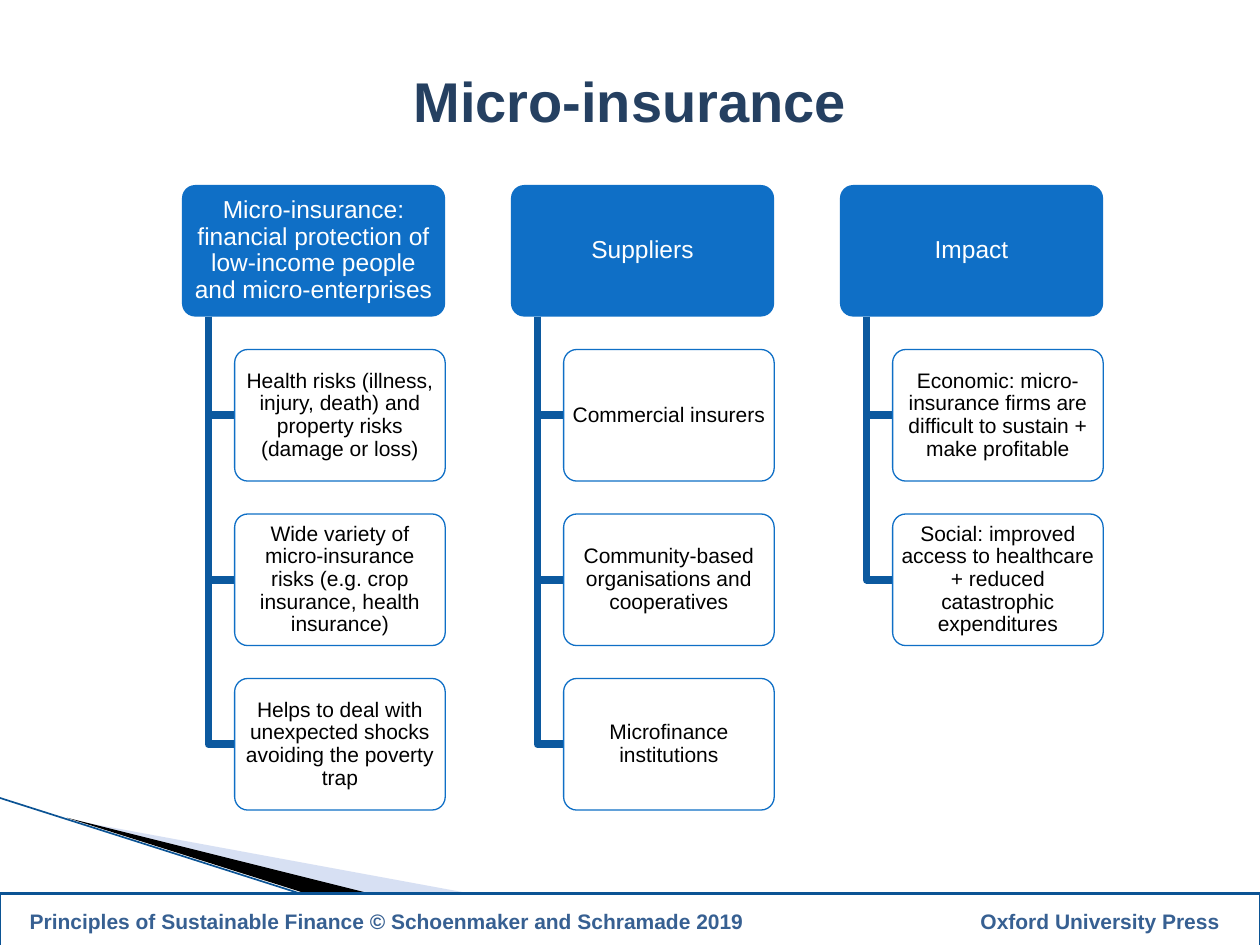
from dataclasses import dataclass

from lxml import etree
from pptx import Presentation
from pptx.dml.color import RGBColor
from pptx.enum import shapes as kinds, text as txt
from pptx.oxml.ns import qn
from pptx.util import Pt

BLUE, ELBOW_BLUE, EDGE_BLUE = "0F6FC6", "0C599F", "0B5394"
WHITE, BLACK = "FFFFFF", "000000"

# Column grid: pitches and indents are fractions of the header box
LEFT, TOP = 104, 105.7
HEADER_W, BOX_H = 150.4, 75.2
COLUMN_PITCH, ROW_PITCH = 1.25 * HEADER_W, 1.25 * BOX_H
TRUNK_INDENT, ITEM_INDENT = 0.1 * HEADER_W, 0.2 * HEADER_W
ITEM_W = HEADER_W - ITEM_INDENT


@dataclass
class Column:
    heading: str
    items: list[str]


@dataclass
class Wedge:
    points: list[tuple[float, float]]
    color: str
    opacity: int


COLUMNS = [
    Column("Micro-insurance: financial protection of low-income people and micro-enterprises", [
        "Health risks (illness, injury, death) and property risks (damage or loss)",
        "Wide variety of micro-insurance risks (e.g. crop insurance, health insurance)",
        "Helps to deal with unexpected shocks avoiding the poverty trap",
    ]),
    Column("Suppliers", [
        "Commercial insurers",
        "Community-based organisations and cooperatives",
        "Microfinance institutions",
    ]),
    Column("Impact", [
        "Economic: micro-insurance firms are difficult to sustain + make profitable",
        "Social: improved access to healthcare + reduced catastrophic expenditures",
    ]),
]

WEDGES = [
    Wedge([(39.6, 468.4), (428.4, 540), (328.3, 540)], "9DB2E1", 40),
    Wedge([(38.2, 467.3), (329, 540), (267.8, 540)], BLACK, 100),
]


def rgb(color: str) -> RGBColor:
    return RGBColor.from_string(color)


def paint(shape, color: str, opacity: int = 100) -> None:
    shape.fill.solid()
    shape.fill.fore_color.rgb = rgb(color)
    if opacity < 100:
        swatch = shape._element.spPr.find(qn("a:solidFill"))[0]
        etree.SubElement(swatch, qn("a:alpha"), val=str(opacity * 1000))


def outline(shape, color: str, width: float) -> None:
    shape.line.color.rgb = rgb(color)
    shape.line.width = Pt(width)


def write(paragraph, words: str, size: float, color: str, bold: bool = False) -> None:
    run = paragraph.add_run()
    run.text = words
    run.font.name = "Arial"
    run.font.size = Pt(size)
    run.font.bold = bold
    run.font.color.rgb = rgb(color)


def set_frame(frame, side: float, end: float) -> None:
    """Wrap and centre vertically, with the given side and end margins."""
    frame.word_wrap = True
    frame.vertical_anchor = txt.MSO_ANCHOR.MIDDLE
    frame.margin_left = frame.margin_right = Pt(side)
    frame.margin_top = frame.margin_bottom = Pt(end)


def add_path(slide, points: list[tuple[float, float]], close: bool):
    start, *rest = [(Pt(x), Pt(y)) for x, y in points]
    builder = slide.shapes.build_freeform(*start)
    builder.add_line_segments(rest, close=close)
    path = builder.convert_to_shape()
    path.shadow.inherit = False
    return path


def add_box(slide, left: float, top: float, width: float, words: str,
            size: float, fill: str, color: str):
    box = slide.shapes.add_shape(kinds.MSO_SHAPE.ROUNDED_RECTANGLE,
                                 Pt(left), Pt(top), Pt(width), Pt(BOX_H))
    box.adjustments[0] = 0.1
    box.shadow.inherit = False
    paint(box, fill)
    set_frame(box.text_frame, 0.15 * size, 0.1 * size)
    paragraph = box.text_frame.paragraphs[0]
    paragraph.alignment = txt.PP_ALIGN.CENTER
    paragraph.line_spacing = 0.9
    write(paragraph, words, size, color)
    return box


def add_column(slide, left: float, column: Column) -> None:
    header = add_box(slide, left, TOP, HEADER_W, column.heading, 14, BLUE, WHITE)
    header.line.fill.background()
    trunk, item_left = left + TRUNK_INDENT, left + ITEM_INDENT
    for row, words in enumerate(column.items, start=1):
        top = TOP + row * ROW_PITCH
        middle = top + BOX_H / 2
        elbow = add_path(slide, [(trunk, TOP + BOX_H), (trunk, middle), (item_left, middle)],
                         close=False)
        elbow.fill.background()
        outline(elbow, ELBOW_BLUE, 4.33)
        item = add_box(slide, item_left, top, ITEM_W, words, 12, WHITE, BLACK)
        outline(item, BLUE, 0.75)


def add_corner(slide) -> None:
    for wedge in WEDGES:
        shape = add_path(slide, wedge.points, close=True)
        paint(shape, wedge.color, wedge.opacity)
        shape.line.fill.background()
    edge = slide.shapes.add_connector(kinds.MSO_CONNECTOR.STRAIGHT,
                                      Pt(0), Pt(456), Pt(264), Pt(540))
    outline(edge, EDGE_BLUE, 0.95)
    etree.SubElement(edge._element.spPr, qn("a:effectLst"))


def add_title(slide) -> None:
    title = slide.shapes.title
    title.left, title.top, title.width, title.height = Pt(20), Pt(31.7), Pt(680), Pt(51)
    paint(title, WHITE)
    set_frame(title.text_frame, 7.2, 3.6)
    paragraph = title.text_frame.paragraphs[0]
    paragraph.alignment = txt.PP_ALIGN.CENTER
    write(paragraph, "Micro-insurance", 32, "254061", bold=True)


def add_footer(slide) -> None:
    footer = slide.shapes.add_shape(kinds.MSO_SHAPE.RECTANGLE,
                                    Pt(0), Pt(510.5), Pt(720), Pt(31.7))
    footer.shadow.inherit = False
    paint(footer, WHITE)
    outline(footer, EDGE_BLUE, 1.5)
    set_frame(footer.text_frame, 17, 3.6)
    paragraph = footer.text_frame.paragraphs[0]
    tabs = etree.SubElement(paragraph._p.get_or_add_pPr(), qn("a:tabLst"))
    etree.SubElement(tabs, qn("a:tab"), pos=str(Pt(680)), algn="r")
    paragraph.alignment = txt.PP_ALIGN.LEFT
    write(paragraph, "Principles of Sustainable Finance © Schoenmaker and Schramade 2019"
                     "\tOxford University Press", 12, "376092", bold=True)


def main() -> None:
    deck = Presentation()
    deck.slide_width, deck.slide_height = Pt(720), Pt(540)
    slide = deck.slides.add_slide(deck.slide_layouts[5])
    add_corner(slide)
    for index, column in enumerate(COLUMNS):
        add_column(slide, LEFT + index * COLUMN_PITCH, column)
    add_title(slide)
    add_footer(slide)
    deck.save("out.pptx")


if __name__ == "__main__":
    main()
